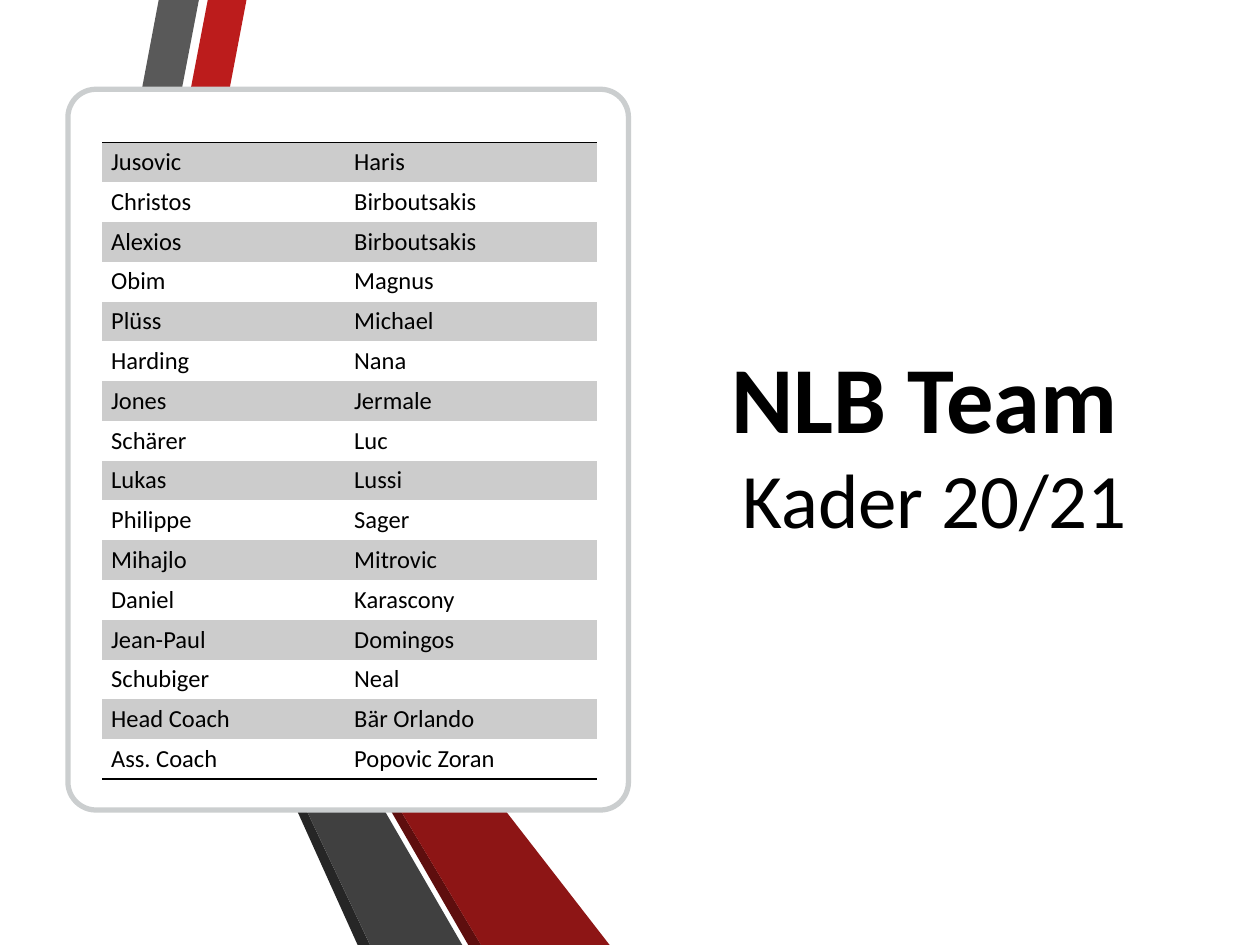
from lxml import etree
from pptx import Presentation
from pptx.dml.color import RGBColor
from pptx.enum.shapes import MSO_SHAPE
from pptx.enum.text import MSO_ANCHOR, PP_ALIGN
from pptx.oxml import parse_xml
from pptx.oxml.ns import nsdecls, qn
from pptx.util import Cm, Pt

BLACK = RGBColor(0x00, 0x00, 0x00)
WHITE = RGBColor(0xFF, 0xFF, 0xFF)
BAND = RGBColor(0xCC, 0xCC, 0xCC)
CARD_LINE = RGBColor(0xCB, 0xCE, 0xCF)
RED = RGBColor(0xBC, 0x1C, 0x1C)
RED_DARK = RGBColor(0x8D, 0x15, 0x15)
RED_EDGE = RGBColor(0x5E, 0x0E, 0x0E)
GREY = RGBColor(0x59, 0x59, 0x59)
GREY_DARK = RGBColor(0x40, 0x40, 0x40)
GREY_EDGE = RGBColor(0x26, 0x26, 0x26)

FONT = "Calibri"
NO_STYLE = "{2D5ABB26-0587-4C30-8999-92F81FD0307C}"
SLIDE_W, SLIDE_H = 25.4, 19.05

# Folded ribbons: colour and corners in cm from the ribbons' left top
RIBBONS = [
    (RED, [(0.91, 7.47), (1.65, 7.72), (3.12, 0), (2.34, 0)]),
    (GREY, [(0.74, 7.42), (2.16, 0), (1.35, 0), (0, 7.16)]),
    (GREY_EDGE, [(0, 7.16), (5.36, SLIDE_H), (5.61, SLIDE_H)]),
    (RED_EDGE, [(0.91, 7.47), (7.59, SLIDE_H), (7.85, SLIDE_H)]),
    (RED_DARK, [(0.91, 7.47), (7.85, SLIDE_H), (10.44, SLIDE_H), (1.65, 7.72)]),
    (GREY_DARK, [(0, 7.16), (5.61, SLIDE_H), (7.47, SLIDE_H), (0.74, 7.42)]),
]

ROSTER = [
    ("Jusovic", "Haris"),
    ("Christos", "Birboutsakis"),
    ("Alexios", "Birboutsakis"),
    ("Obim", "Magnus"),
    ("Plüss", "Michael"),
    ("Harding", "Nana"),
    ("Jones", "Jermale"),
    ("Schärer", "Luc"),
    ("Lukas", "Lussi"),
    ("Philippe", "Sager"),
    ("Mihajlo", "Mitrovic"),
    ("Daniel", "Karascony"),
    ("Jean-Paul", "Domingos"),
    ("Schubiger", "Neal"),
    ("Head Coach", "Bär Orlando"),
    ("Ass. Coach", "Popovic Zoran"),
]


def set_attrs(obj, values):
    for name, value in values.items():
        setattr(obj, name, value)


def format_font(font, size, bold=False):
    set_attrs(font, {"name": FONT, "size": Pt(size), "bold": bold})
    font.color.rgb = BLACK


def add_title(s, left, top, width, height):
    title = s.shapes.title
    set_attrs(title, {"left": Cm(left), "top": Cm(top),
                      "width": Cm(width), "height": Cm(height)})
    tf = title.text_frame
    set_attrs(tf, {"word_wrap": True, "vertical_anchor": MSO_ANCHOR.BOTTOM})
    p = tf.paragraphs[0]
    p.alignment = PP_ALIGN.CENTER
    r = p.add_run()
    r.text = "NLB Team "
    format_font(r.font, 54, bold=True)
    p.add_line_break()
    r = p.add_run()
    r.text = "Kader 20/21"
    format_font(r.font, 44)


def add_ribbons(s, left, top):
    for color, corners in RIBBONS:
        points = [(Cm(left + x), Cm(top + y)) for x, y in corners]
        builder = s.shapes.build_freeform(*points[0])
        builder.add_line_segments(points[1:], close=True)
        sp = builder.convert_to_shape()
        sp.shadow.inherit = False
        sp.fill.solid()
        sp.fill.fore_color.rgb = color
        sp.line.fill.background()


def add_rule(cell, side):
    """Draw a thin black border on the 'T' or 'B' side of a cell."""
    ln = parse_xml(f'<a:ln{side} {nsdecls("a")} w="12700"/>')
    fill = etree.SubElement(ln, qn("a:solidFill"))
    etree.SubElement(fill, qn("a:srgbClr"), val=str(BLACK))
    cell._tc.get_or_add_tcPr().insert(0, ln)


def add_roster(s, left, top, col_widths, row_height):
    rows = len(ROSTER)
    frame = s.shapes.add_table(rows, len(col_widths), Cm(left), Cm(top),
                               Cm(sum(col_widths)), Cm(rows * row_height))
    table = frame.table
    set_attrs(table, {"first_row": False, "horz_banding": False})
    table._tbl.tblPr.find(qn("a:tableStyleId")).text = NO_STYLE
    for col, width in zip(table.columns, col_widths):
        col.width = Cm(width)
    for i, names in enumerate(ROSTER):
        table.rows[i].height = Cm(row_height)
        for cell, name in zip(table.rows[i].cells, names):
            cell.text = name
            set_attrs(cell, {"margin_left": Cm(0.18), "margin_right": Cm(0.18),
                             "margin_top": Cm(0.1), "margin_bottom": Cm(0.1)})
            format_font(cell.text_frame.paragraphs[0].runs[0].font, 14)
            if i % 2 == 0:
                cell.fill.solid()
                cell.fill.fore_color.rgb = BAND
            else:
                cell.fill.background()
            if i == 0:
                add_rule(cell, "T")
            elif i == rows - 1:
                add_rule(cell, "B")


def add_roster_card(s, left, top, width, height):
    card = s.shapes.add_shape(MSO_SHAPE.ROUNDED_RECTANGLE, Cm(left), Cm(top),
                              Cm(width), Cm(height))
    card.adjustments[0] = 0.05
    card.shadow.inherit = False
    card.fill.solid()
    card.fill.fore_color.rgb = WHITE
    card.line.color.rgb = CARD_LINE
    card.line.width = Pt(3)
    add_roster(s, left + 0.69, top + 1.07, (4.9, 5.08), 0.8)


def main():
    prs = Presentation()
    set_attrs(prs, {"slide_width": Cm(SLIDE_W), "slide_height": Cm(SLIDE_H)})
    s = prs.slides.add_slide(prs.slide_layouts[5])
    add_title(s, 13.72, 1.8, 10.26, 9.3)
    add_ribbons(s, 1.85, 0)
    add_roster_card(s, 1.37, 1.8, 11.3, 14.53)
    prs.save("out.pptx")


if __name__ == "__main__":
    main()
